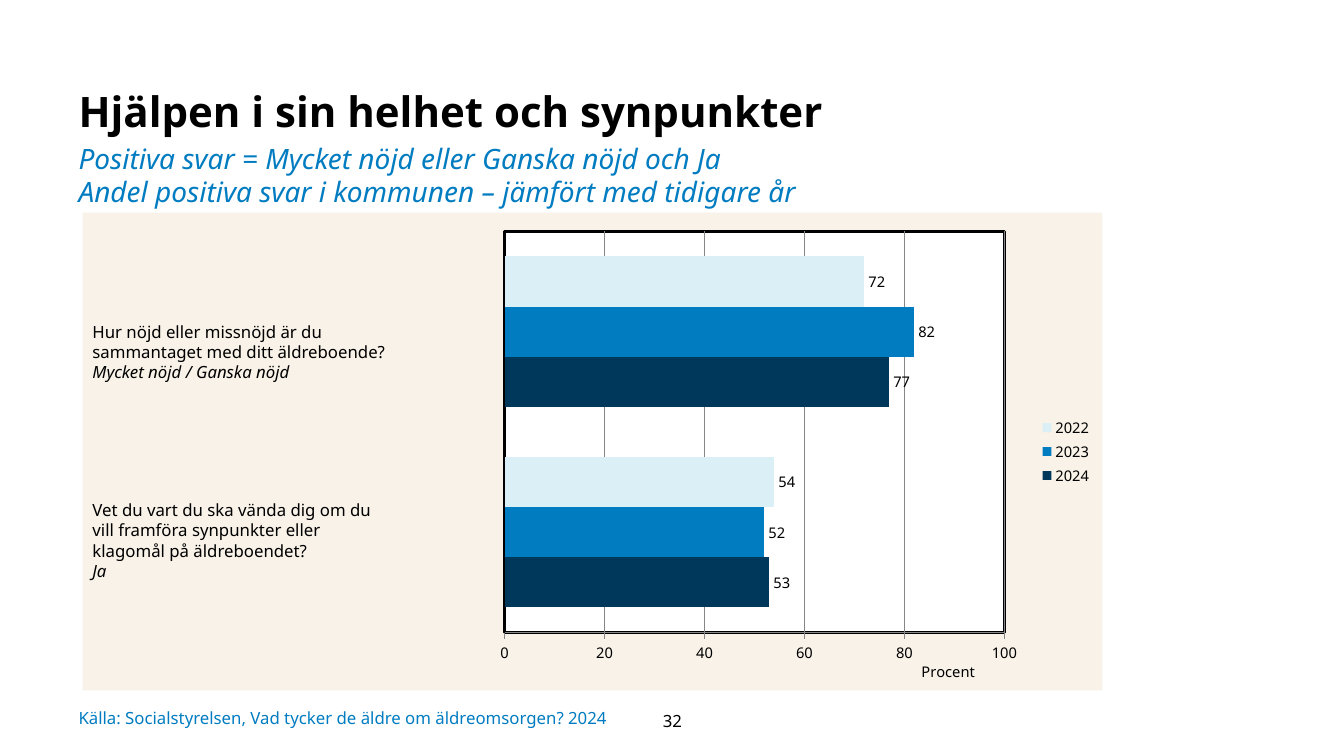
from lxml import etree
from pptx import Presentation
from pptx.chart.data import CategoryChartData
from pptx.dml.color import RGBColor
from pptx.enum.chart import XL_CHART_TYPE, XL_LABEL_POSITION, XL_LEGEND_POSITION, XL_TICK_LABEL_POSITION, XL_TICK_MARK
from pptx.enum.text import MSO_ANCHOR, PP_ALIGN
from pptx.oxml import parse_xml
from pptx.oxml.ns import nsdecls, qn
from pptx.util import Cm, Pt

BAR = XL_CHART_TYPE.BAR_CLUSTERED
RIGHT = XL_LEGEND_POSITION.RIGHT
OUTSIDE_END = XL_LABEL_POSITION.OUTSIDE_END
NO_LABELS = XL_TICK_LABEL_POSITION.NONE
NO_TICK, TICK_OUT = XL_TICK_MARK.NONE, XL_TICK_MARK.OUTSIDE
TOP, MIDDLE = MSO_ANCHOR.TOP, MSO_ANCHOR.MIDDLE
LEFT, CENTER = PP_ALIGN.LEFT, PP_ALIGN.CENTER

FONT = "Noto Sans"
BLACK, BLUE, GREY = "000000", "017CC1", "868686"
SAND, WHITE = "F8F2E8", "FFFFFF"
INSET = (0.25, 0.13, 0.25, 0.13)
FLUSH = (0, 0, 0, 0)

TITLE = "Hjälpen i sin helhet och synpunkter"
SUBTITLE = ("Positiva svar = Mycket nöjd eller Ganska nöjd och Ja\v"
            "Andel positiva svar i kommunen – jämfört med tidigare år")
SOURCE = "Källa: Socialstyrelsen, Vad tycker de äldre om äldreomsorgen? 2024"
QUESTIONS = [
    (7.98, 1.8, "Hur nöjd eller missnöjd är du sammantaget med ditt äldreboende?",
     "Mycket nöjd / Ganska nöjd"),
    (12.47, 2.31, "Vet du vart du ska vända dig om du vill framföra synpunkter eller "
     "klagomål på äldreboendet?", "Ja"),
]
CATEGORIES = ["1", "2"]
SERIES = [
    ("2024", (53, 77), "00385C"),
    ("2023", (52, 82), BLUE),
    ("2022", (54, 72), "DBF0F6"),
]
CHART_BOX = (2.08, 5.36, 25.7, 12.04)
PLOT = {"x": 0.414, "y": 0.039, "w": 0.49, "h": 0.84}
AXIS_TITLE = {"x": 0.82, "y": 0.93}


def color(value):
    return RGBColor.from_string(value)


def style(font, size, value=BLACK, bold=False, italic=False):
    font.name, font.size = FONT, Pt(size)
    font.bold, font.italic = bold, italic
    font.color.rgb = color(value)


def add_text(s, box, lines, size, value=BLACK, inset=FLUSH, anchor=TOP, align=LEFT, spacing=None):
    tf = s.shapes.add_textbox(*map(Cm, box)).text_frame
    tf.word_wrap = True
    tf.vertical_anchor = anchor
    tf.margin_left, tf.margin_top, tf.margin_right, tf.margin_bottom = map(Cm, inset)
    for i, (text, bold, italic) in enumerate(lines):
        p = tf.paragraphs[0] if i == 0 else tf.add_paragraph()
        p.alignment = align
        p.line_spacing = spacing
        for j, part in enumerate(text.split("\v")):
            if j:
                p.add_line_break()
            r = p.add_run()
            r.text = part
            style(r.font, size, value, bold, italic)


def set_layout(parent, after, target, places):
    for old in parent.findall(qn("c:layout")):
        parent.remove(old)
    layout = parse_xml(f"<c:layout {nsdecls('c')}><c:manualLayout/></c:layout>")
    manual = layout[0]
    if target:
        etree.SubElement(manual, qn("c:layoutTarget")).set("val", target)
    for key in ("x", "y"):
        etree.SubElement(manual, qn(f"c:{key}Mode")).set("val", "edge")
    for key, value in places.items():
        etree.SubElement(manual, qn(f"c:{key}")).set("val", str(value))
    if after is None:
        parent.insert(0, layout)
    else:
        after.addnext(layout)


def fill_xml(value, line=""):
    return parse_xml(f'<c:spPr {nsdecls("c", "a")}><a:solidFill><a:srgbClr val="{value}"/>'
                     f'</a:solidFill>{line}</c:spPr>')


def add_bar_chart(s):
    data = CategoryChartData(number_format="0")
    data.categories = CATEGORIES
    for name, values, _ in SERIES:
        data.add_series(name, values)
    chart = s.shapes.add_chart(BAR, *map(Cm, CHART_BOX), data).chart
    style(chart.font, 10)
    chart.has_title = False
    chart.has_legend = True
    chart.legend.position = RIGHT
    chart.legend.include_in_layout = False
    style(chart.legend.font, 10.5)

    plot = chart.plots[0]
    plot.gap_width, plot.overlap = 100, 0
    plot.vary_by_categories = False
    for series, (_, _, value) in zip(plot.series, SERIES):
        series.format.fill.solid()
        series.format.fill.fore_color.rgb = color(value)
        labels = series.data_labels
        labels.show_value = True
        labels.position = OUTSIDE_END
        style(labels.font, 10.5)

    cat = chart.category_axis
    cat.tick_label_position = NO_LABELS
    cat.major_tick_mark = cat.minor_tick_mark = NO_TICK
    cat.format.line.color.rgb = color(BLACK)

    val = chart.value_axis
    val.minimum_scale, val.maximum_scale, val.major_unit = 0, 100, 20
    val.major_tick_mark, val.minor_tick_mark = TICK_OUT, NO_TICK
    val.has_major_gridlines = True
    for line in (val.major_gridlines.format.line, val.format.line):
        line.color.rgb = color(GREY)
        line.width = Pt(0.75)
    style(val.tick_labels.font, 10.5)
    r = val.axis_title.text_frame.paragraphs[0].add_run()
    r.text = "Procent"
    style(r.font, 10.5)
    title = val.axis_title._element
    set_layout(title, title.find(qn("c:tx")), None, AXIS_TITLE)

    area = chart._chartSpace.chart.plotArea
    set_layout(area, None, "inner", PLOT)
    area.append(fill_xml(WHITE, f'<a:ln w="25400"><a:solidFill><a:srgbClr val="{BLACK}"/>'
                                '</a:solidFill></a:ln>'))
    chart._chartSpace.chart.addnext(fill_xml(SAND, "<a:ln><a:noFill/></a:ln>"))


def main():
    prs = Presentation()
    prs.slide_width, prs.slide_height = Cm(33.87), Cm(19.05)
    s = prs.slides.add_slide(prs.slide_layouts[6])
    add_text(s, (1.98, 2.03, 25.7, 1.45), [(TITLE, True, False)], 30,
             inset=(0, 0, 0.25, 0.13), spacing=1.1)
    add_text(s, (1.98, 3.56, 24.94, 1.63), [(SUBTITLE, False, True)], 20, BLUE)
    add_bar_chart(s)
    for top, height, question, answer in QUESTIONS:
        add_text(s, (2.08, top, 8.04, height),
                 [(question, False, False), (answer, False, True)], 12, inset=INSET)
    add_text(s, (1.98, 17.5, 14.6, 1.19), [(SOURCE, False, False)], 12, BLUE, anchor=MIDDLE)
    add_text(s, (15.65, 17.65, 2.59, 1.02), [("32", False, False)], 12,
             inset=INSET, anchor=MIDDLE, align=CENTER)
    prs.save("out.pptx")


if __name__ == "__main__":
    main()
